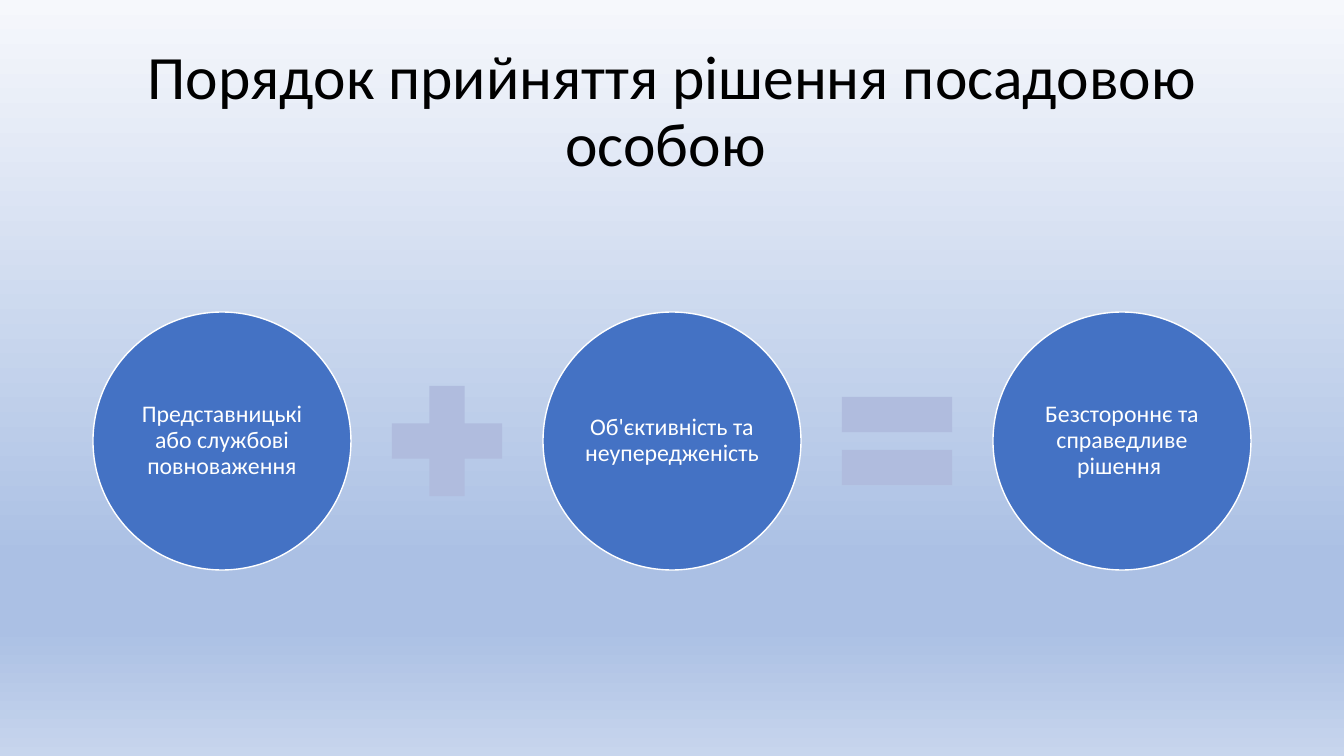
"""Build a slide showing how an official's decision is formed."""
import dataclasses
import typing

import lxml.etree
import pptx
import pptx.dml.color
import pptx.enum.shapes
import pptx.enum.text
import pptx.oxml.ns
import pptx.util

SLIDE_WIDTH, SLIDE_HEIGHT = 1344, 756
EMU_PER_PX = 12192000 / SLIDE_WIDTH
MARGIN = 93
PITCH = 450
CENTER_Y = 441
CIRCLE_SIZE = 258
OPERATOR_SIZE = 150
FONT = "Calibri"
COLORS = {
    "title": "000000",
    "circle": "4472C4",
    "outline": "FFFFFF",
    "label": "FFFFFF",
    "operator": "B0BCDE",
}
BACKGROUND_STOPS = [(0, "F6F8FC"), (74, "ABC0E4"), (83, "ABC0E4"), (100, "C7D5ED")]
SHAPE = pptx.enum.shapes.MSO_SHAPE


@dataclasses.dataclass
class TextStyle:
    size: int
    color: str
    inset: tuple[int, int]


@dataclasses.dataclass
class Term:
    label: str


@dataclasses.dataclass
class Operator:
    preset: SHAPE


TITLE = "Порядок прийняття рішення посадовою особою "
TITLE_STYLE = TextStyle(44, "title", (10, 5))
LABEL_STYLE = TextStyle(17, "label", (2, 2))
TERMS = [
    Term("Представницькі або службові повноваження"),
    Term("Об'єктивність та неупередженість "),
    Term("Безстороннє та справедливе рішення "),
]
OPERATORS = [Operator(SHAPE.MATH_PLUS), Operator(SHAPE.MATH_EQUAL)]


def px(length: float) -> int:
    return round(length * EMU_PER_PX)


def rgb(name: str) -> pptx.dml.color.RGBColor:
    return pptx.dml.color.RGBColor.from_string(COLORS[name])


def apply(target: typing.Any, values: dict[str, typing.Any]) -> None:
    for name, value in values.items():
        setattr(target, name, value)


def paint_background(page: typing.Any) -> None:
    fill = page.background.fill
    fill.gradient()
    fill.gradient_angle = 270
    qn = pptx.oxml.ns.qn
    stops = page.element.find(".//" + qn("a:gsLst"))
    for stop in list(stops):
        stops.remove(stop)
    for percent, color in BACKGROUND_STOPS:
        stop = lxml.etree.SubElement(stops, qn("a:gs"), pos=str(percent * 1000))
        lxml.etree.SubElement(stop, qn("a:srgbClr"), val=color)


def write_text(box: typing.Any, text: str, style: TextStyle) -> None:
    across, down = style.inset
    frame = box.text_frame
    apply(frame, {
        "word_wrap": True,
        "vertical_anchor": pptx.enum.text.MSO_ANCHOR.MIDDLE,
        "margin_left": px(across),
        "margin_right": px(across),
        "margin_top": px(down),
        "margin_bottom": px(down),
    })
    para = frame.paragraphs[0]
    apply(para, {"alignment": pptx.enum.text.PP_ALIGN.CENTER, "line_spacing": 0.9})
    span = para.add_run()
    span.text = text
    apply(span.font, {"name": FONT, "size": pptx.util.Pt(style.size)})
    span.font.color.rgb = rgb(style.color)


def add_centered(page: typing.Any, preset: SHAPE, center_x: float, size: int,
                 color: str) -> typing.Any:
    left, top = center_x - size / 2, CENTER_Y - size / 2
    shape = page.shapes.add_shape(preset, px(left), px(top), px(size), px(size))
    shape.shadow.inherit = False
    shape.fill.solid()
    shape.fill.fore_color.rgb = rgb(color)
    shape.line.fill.background()
    return shape


def draw_term(page: typing.Any, term: Term, center_x: float) -> None:
    circle = add_centered(page, SHAPE.OVAL, center_x, CIRCLE_SIZE, "circle")
    circle.line.color.rgb = rgb("outline")
    circle.line.width = pptx.util.Pt(1)
    write_text(circle, term.label, LABEL_STYLE)


def main() -> None:
    deck = pptx.Presentation()
    apply(deck, {"slide_width": px(SLIDE_WIDTH), "slide_height": px(SLIDE_HEIGHT)})
    page = deck.slides.add_slide(deck.slide_layouts[6])
    paint_background(page)
    title = page.shapes.add_textbox(px(MARGIN), px(40), px(1159), px(146))
    write_text(title, TITLE, TITLE_STYLE)
    first_center = MARGIN + CIRCLE_SIZE / 2
    for index, term in enumerate(TERMS):
        draw_term(page, term, first_center + index * PITCH)
    for index, operator in enumerate(OPERATORS):
        center_x = first_center + (index + 0.5) * PITCH
        add_centered(page, operator.preset, center_x, OPERATOR_SIZE, "operator")
    deck.save("out.pptx")


if __name__ == "__main__":
    main()
